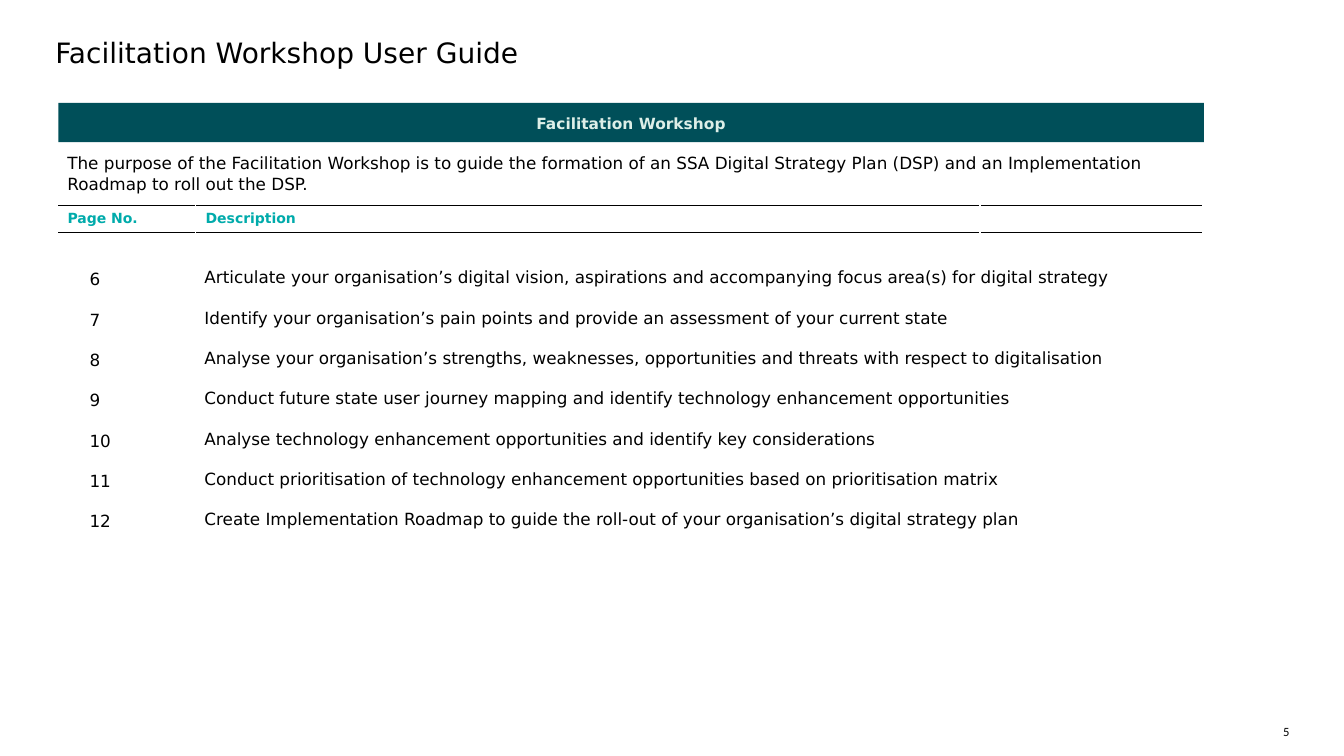
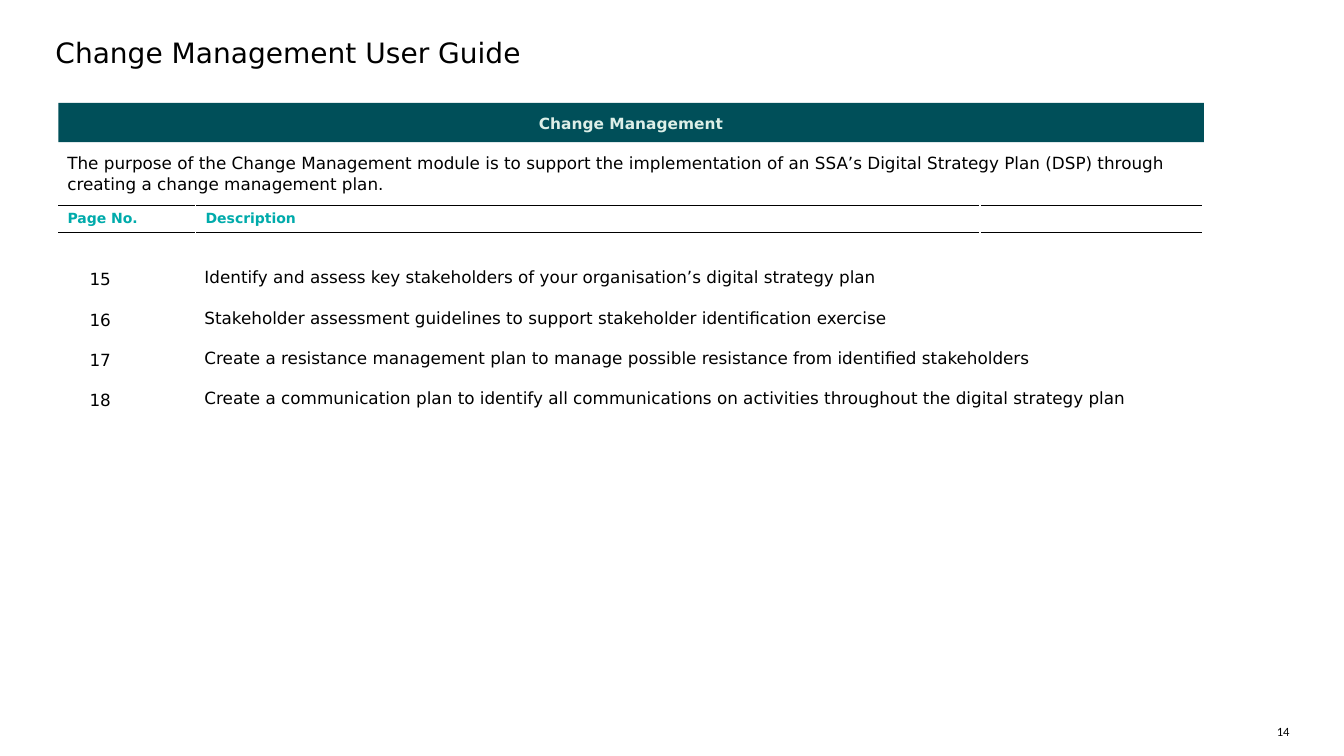
import pptx
import pptx.dml.color
import pptx.enum.shapes
import pptx.enum.text
import pptx.oxml
import pptx.oxml.ns
import pptx.util

Inches = pptx.util.Inches
Pt = pptx.util.Pt
RGBColor = pptx.dml.color.RGBColor
PP_ALIGN = pptx.enum.text.PP_ALIGN

# Shared style
BLACK = RGBColor(0x00, 0x00, 0x00)
DARK_TEAL = RGBColor(0x00, 0x4F, 0x59)
TEAL = RGBColor(0x00, 0xAB, 0xAB)
PALE_GREEN = RGBColor(0xDD, 0xEF, 0xE8)
BODY_FONT = "DejaVu Sans"
NUMBER_FONT = "Calibri"

# Shared layout, in inches
CONTENT_LEFT = 0.57
CONTENT_WIDTH = 11.36
COLUMN_WIDTHS = (1.37, 7.78, 2.21)
COLUMN_HEADINGS = ("Page No.", "Description", "")

GUIDES = [
    {
        "number": "5",
        "title": "Facilitation Workshop User Guide",
        "band": "Facilitation Workshop",
        "purpose": "The purpose of the Facilitation Workshop is to guide the formation of an SSA "
                   "Digital Strategy Plan (DSP) and an Implementation Roadmap to roll out the DSP.",
        "first_page": 6,
        "descriptions": [
            "Articulate your organisation’s digital vision, aspirations and accompanying "
            "focus area(s) for digital strategy",
            "Identify your organisation’s pain points and provide an assessment of your current state",
            "Analyse your organisation’s strengths, weaknesses, opportunities and threats "
            "with respect to digitalisation",
            "Conduct future state user journey mapping and identify technology enhancement opportunities",
            "Analyse technology enhancement opportunities and identify key considerations",
            "Conduct prioritisation of technology enhancement opportunities based on prioritisation matrix",
            "Create Implementation Roadmap to guide the roll-out of your organisation’s "
            "digital strategy plan",
        ],
    },
    {
        "number": "14",
        "title": "Change Management User Guide",
        "band": "Change Management",
        "purpose": "The purpose of the Change Management module is to support the implementation of an "
                   "SSA’s Digital Strategy Plan (DSP) through creating a change management plan.",
        "first_page": 15,
        "descriptions": [
            "Identify and assess key stakeholders of your organisation’s digital strategy plan",
            "Stakeholder assessment guidelines to support stakeholder identification exercise",
            "Create a resistance management plan to manage possible resistance from identified stakeholders",
            "Create a communication plan to identify all communications on activities throughout "
            "the digital strategy plan",
        ],
    },
]


def style_paragraph(paragraph, size, color=BLACK, bold=False, font=BODY_FONT):
    paragraph.font.size = Pt(size)
    paragraph.font.name = font
    paragraph.font.bold = bold
    paragraph.font.color.rgb = color


def set_margins(frame, margin):
    frame.margin_left = frame.margin_right = Inches(margin)
    frame.margin_top = frame.margin_bottom = Inches(margin)


def add_text(slide, box, lines, size, font=BODY_FONT, align=PP_ALIGN.LEFT,
             line_spacing=1.0, margin=None):
    shape = slide.shapes.add_textbox(*map(Inches, box))
    frame = shape.text_frame
    frame.word_wrap = True
    if margin is not None:
        set_margins(frame, margin)
    frame.text = "\n".join(lines)
    for paragraph in frame.paragraphs:
        paragraph.alignment = align
        paragraph.line_spacing = line_spacing
        style_paragraph(paragraph, size, font=font)


def add_band(slide, text):
    shape = slide.shapes.add_shape(
        pptx.enum.shapes.MSO_SHAPE.RECTANGLE,
        Inches(0.58), Inches(1.02), Inches(CONTENT_WIDTH), Inches(0.39))
    shape.shadow.inherit = False
    shape.fill.solid()
    shape.fill.fore_color.rgb = DARK_TEAL
    shape.line.fill.background()
    frame = shape.text_frame
    frame.word_wrap = True
    frame.vertical_anchor = pptx.enum.text.MSO_ANCHOR.MIDDLE
    set_margins(frame, 0.1)
    frame.text = text
    paragraph = frame.paragraphs[0]
    paragraph.alignment = PP_ALIGN.CENTER
    paragraph.line_spacing = 1.06
    style_paragraph(paragraph, 11, PALE_GREEN, bold=True)


def add_cell_rules(cell):
    """Draw a thin black line above and below a cell."""
    properties = cell._tc.get_or_add_tcPr()
    for side in ("lnT", "lnB"):
        properties.append(pptx.oxml.parse_xml(
            f'<a:{side} {pptx.oxml.ns.nsdecls("a")} w="{Pt(1)}">'
            f'<a:solidFill><a:srgbClr val="{BLACK}"/></a:solidFill></a:{side}>'))


def add_heading_table(slide):
    table = slide.shapes.add_table(
        1, len(COLUMN_WIDTHS), Inches(CONTENT_LEFT), Inches(2.04),
        Inches(CONTENT_WIDTH), Inches(0.27)).table
    table.first_row = False
    table.horz_banding = False
    for index, (width, heading) in enumerate(zip(COLUMN_WIDTHS, COLUMN_HEADINGS)):
        table.columns[index].width = Inches(width)
        cell = table.cell(0, index)
        add_cell_rules(cell)
        cell.fill.background()
        cell.text = heading
        paragraph = cell.text_frame.paragraphs[0]
        style_paragraph(paragraph, 10, TEAL, bold=True)
        if not heading:
            # Keeps the empty cell from stretching the row
            paragraph._p.get_or_add_endParaRPr().set("sz", "1000")


def add_guide_slide(presentation, guide):
    slide = presentation.slides.add_slide(presentation.slide_layouts[6])

    # Title, band and purpose
    add_text(slide, (0.55, 0.35, 12.31, 0.76), [guide["title"]], 20, margin=0)
    add_band(slide, guide["band"])
    add_text(slide, (CONTENT_LEFT, 1.47, CONTENT_WIDTH, 0.5), [guide["purpose"]], 12)

    # Page list
    add_heading_table(slide)
    descriptions = guide["descriptions"]
    pages = [str(page) for page, _ in enumerate(descriptions, guide["first_page"])]
    height = 0.41 * len(descriptions)
    add_text(slide, (0.79, 2.42, 0.83, height), pages, 12, line_spacing=2.0)
    add_text(slide, (1.93, 2.4, 10.1, height), descriptions, 12, line_spacing=2.0)

    # Page number
    add_text(slide, (12.45, 7.18, 0.34, 0.15), [guide["number"]], 9,
             font=NUMBER_FONT, align=PP_ALIGN.RIGHT, margin=0)


def main():
    presentation = pptx.Presentation()
    presentation.slide_width = Inches(13.33)
    presentation.slide_height = Inches(7.5)
    for guide in GUIDES:
        add_guide_slide(presentation, guide)
    presentation.save("out.pptx")


if __name__ == "__main__":
    main()
